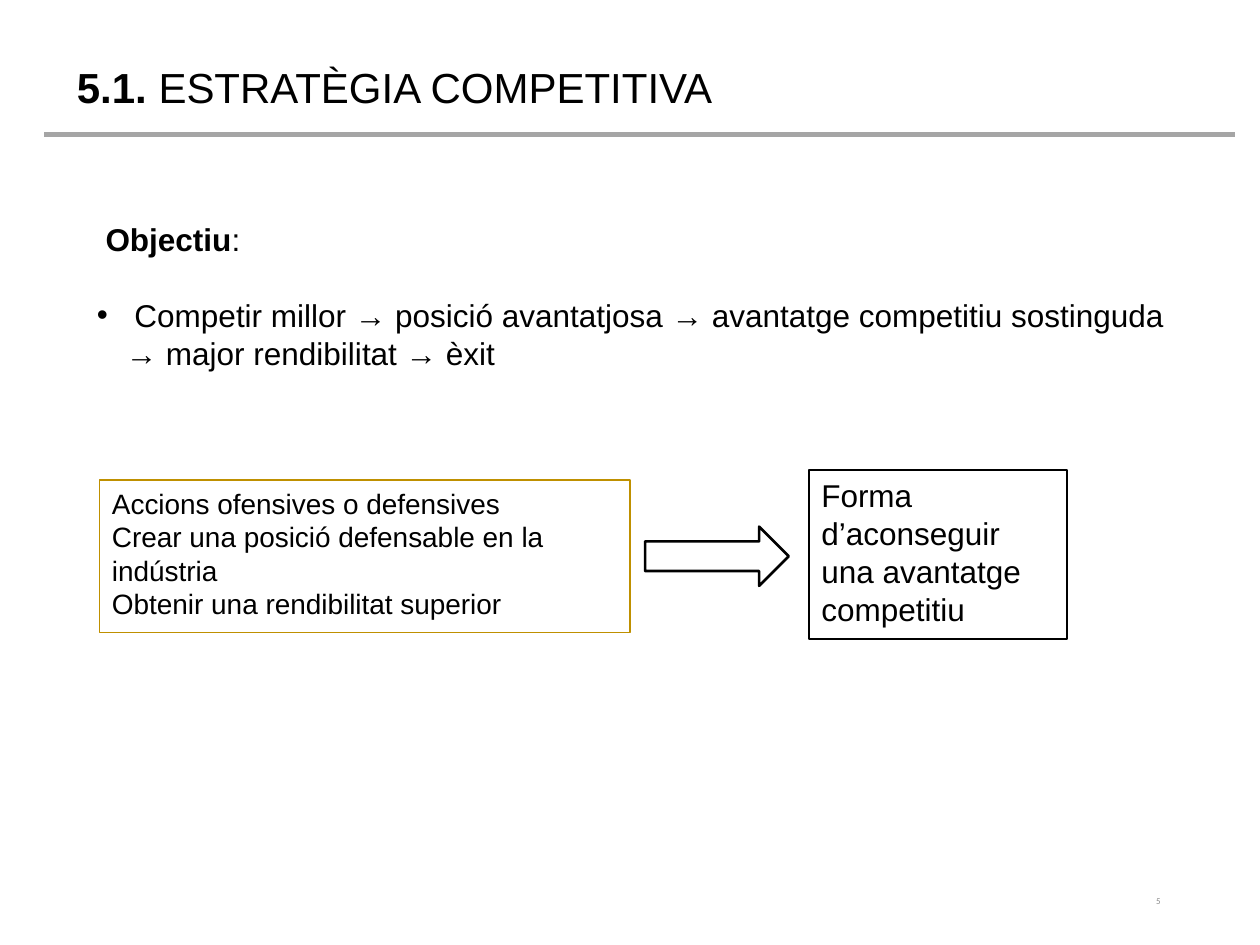
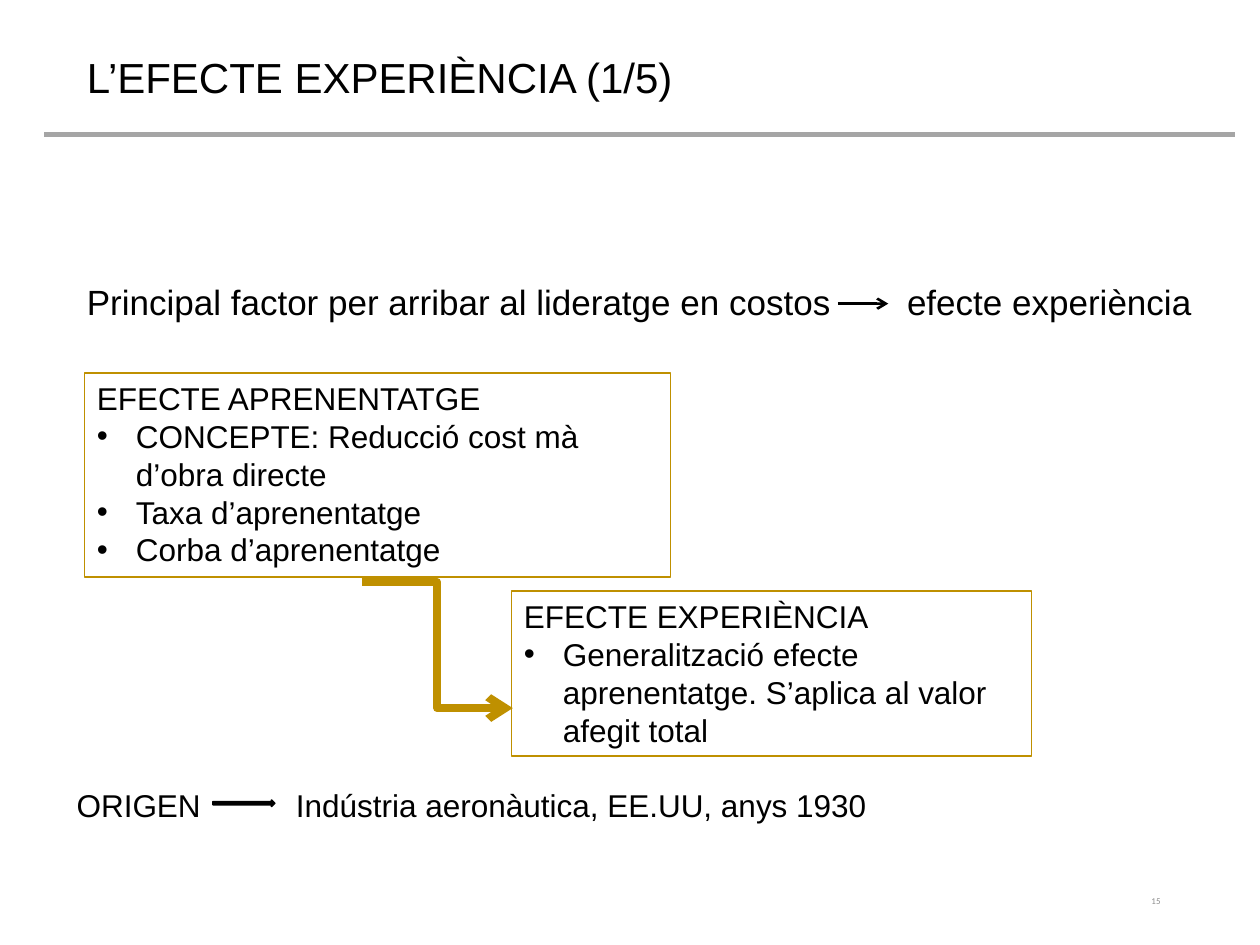
from lxml.etree import SubElement
from pptx import Presentation
from pptx.dml.color import RGBColor
from pptx.enum.shapes import MSO_CONNECTOR, MSO_SHAPE
from pptx.enum.text import MSO_ANCHOR, MSO_AUTO_SIZE, PP_ALIGN
from pptx.oxml.ns import qn
from pptx.util import Emu, Pt

PX = 9144  # 100 px to the inch
COLORS = {"ink": "000000", "rule": "A5A5A5", "gold": "BF9000", "number": "8C8C8C"}
BULLET_INDENT = 31


def px(length):
    return Emu(length * PX)


def color(name):
    return RGBColor.from_string(COLORS[name])


def set_values(target, values):
    for name, value in values.items():
        setattr(target, name, value)


class Builder:
    """Holds the shared style and the slide being drawn."""

    def __init__(self):
        self.deck = Presentation()
        self.deck.slide_width, self.deck.slide_height = px(1000), px(750)
        self.page = None

    def new_page(self, title, left, top, number):
        self.page = self.deck.slides.add_slide(self.deck.slide_layouts[5])
        self.line((35, 107), (980, 107), "rule", 3)
        self.text((706, 695, 225, 40), [number], size=5.1, font="Calibri",
                  ink="number", align=PP_ALIGN.RIGHT, anchor=MSO_ANCHOR.MIDDLE)
        box = self.page.shapes.title
        set_values(box, dict(left=px(left), top=px(top), width=px(835), height=px(50)))
        self.fill_text(box, [title], size=24)

    def fill_text(self, box, paras, size=18, font="Arial", ink="ink",
                  align=PP_ALIGN.LEFT, anchor=MSO_ANCHOR.TOP):
        """Each para is a string, or a dict with spans, bullet, tab or before."""
        frame = box.text_frame
        set_values(frame, dict(word_wrap=True, vertical_anchor=anchor,
                               auto_size=MSO_AUTO_SIZE.NONE))
        for index, item in enumerate(paras):
            item = item if isinstance(item, dict) else {"spans": [(item, False)]}
            para = frame.paragraphs[0] if index == 0 else frame.add_paragraph()
            para.alignment = align
            if "before" in item:
                para.space_before = Pt(item["before"])
            props = para._p.get_or_add_pPr()
            if "bullet" in item:
                props.set("marL", str(px(item["bullet"])))
                props.set("indent", str(-px(item["bullet"])))
                SubElement(props, qn("a:buFont"), typeface="Arial")
                SubElement(props, qn("a:buChar"), char="•")
            if "tab" in item:
                tabs = SubElement(props, qn("a:tabLst"))
                SubElement(tabs, qn("a:tab"), pos=str(px(item["tab"])), algn="l")
            for words, bold in item["spans"]:
                span = para.add_run()
                span.text = words
                set_values(span.font, dict(name=font, size=Pt(size), bold=bold))
                span.font.color.rgb = color(ink)

    def text(self, area, paras, **style):
        box = self.page.shapes.add_textbox(*map(px, area))
        self.fill_text(box, paras, **style)

    def shape(self, kind, area, outline, weight, fill=None):
        shape = self.page.shapes.add_shape(kind, *map(px, area))
        shape.shadow.inherit = False
        if fill:
            shape.fill.solid()
            shape.fill.fore_color.rgb = color(fill)
        else:
            shape.fill.background()
        shape.line.color.rgb = color(outline)
        shape.line.width = Pt(weight)
        return shape

    def panel(self, area, paras, outline="gold", weight=0.75, size=18):
        box = self.shape(MSO_SHAPE.RECTANGLE, area, outline, weight)
        self.fill_text(box, paras, size=size)

    def line(self, start, end, ink, weight, kind=MSO_CONNECTOR.STRAIGHT, arrow=False):
        line = self.page.shapes.add_connector(kind, *map(px, start + end))
        line.line.color.rgb = color(ink)
        line.line.width = Pt(weight)
        if arrow:
            SubElement(line.line._get_or_add_ln(), qn("a:tailEnd"), type="arrow")
        SubElement(line._element.spPr, qn("a:effectLst"))


def bullet(words, indent=BULLET_INDENT, **extra):
    return dict(spans=[(words, False)], bullet=indent, **extra)


def tabbed(words, tab):
    return dict(spans=[(words, False)], tab=tab)


def competitive_strategy(builder):
    title = {"spans": [("5.1.", True), (" ESTRATÈGIA COMPETITIVA", False)]}
    builder.new_page(title, 51, 44, "5")
    # Objective
    builder.text((67, 170, 890, 131), [
        {"spans": [(" Objectiu", True), (":", False)]},
        bullet(" Competir millor → posició avantatjosa → avantatge competitiu "
               "sostinguda → major rendibilitat → èxit", indent=23, before=21.5),
    ])
    # Actions leading to the advantage
    builder.panel((79, 381, 421, 121), [
        "Accions ofensives o defensives",
        "Crear una posició defensable en la indústria",
        "Obtenir una rendibilitat superior",
    ], weight=1, size=16)
    builder.shape(MSO_SHAPE.RIGHT_ARROW, (512, 418, 114, 47), "ink", 1.5)
    builder.panel((642, 373, 205, 134),
                  ["Forma d’aconseguir una avantatge competitiu"],
                  outline="ink", weight=1)


def experience_effect(builder):
    builder.new_page("L’EFECTE EXPERIÈNCIA (1/5)", 59, 36, "15")
    # Main factor
    builder.text((59, 218, 898, 129), [
        tabbed("Principal factor per arribar al lideratge en costos\tefecte experiència", 651),
    ], size=20)
    builder.line((665, 241), (705, 241), "ink", 1.5, arrow=True)
    # From learning to experience
    builder.panel((67, 296, 465, 162), [
        "EFECTE APRENENTATGE",
        bullet("CONCEPTE: Reducció cost mà d’obra directe"),
        bullet("Taxa d’aprenentatge"),
        bullet("Corba d’aprenentatge"),
    ])
    builder.panel((406, 469, 413, 131), [
        "EFECTE EXPERIÈNCIA",
        bullet("Generalització efecte aprenentatge. S’aplica al valor afegit total"),
    ])
    builder.line((287, 462), (407, 562), "gold", 4.5, MSO_CONNECTOR.ELBOW, arrow=True)
    # Origin
    builder.text((51, 619, 693, 40), [
        tabbed("ORIGEN\tIndústria aeronàutica, EE.UU, anys 1930", 174),
    ])
    builder.shape(MSO_SHAPE.RIGHT_ARROW, (169, 635, 49, 5), "ink", 1, fill="ink")


def main():
    builder = Builder()
    competitive_strategy(builder)
    experience_effect(builder)
    builder.deck.save("out.pptx")


if __name__ == "__main__":
    main()
